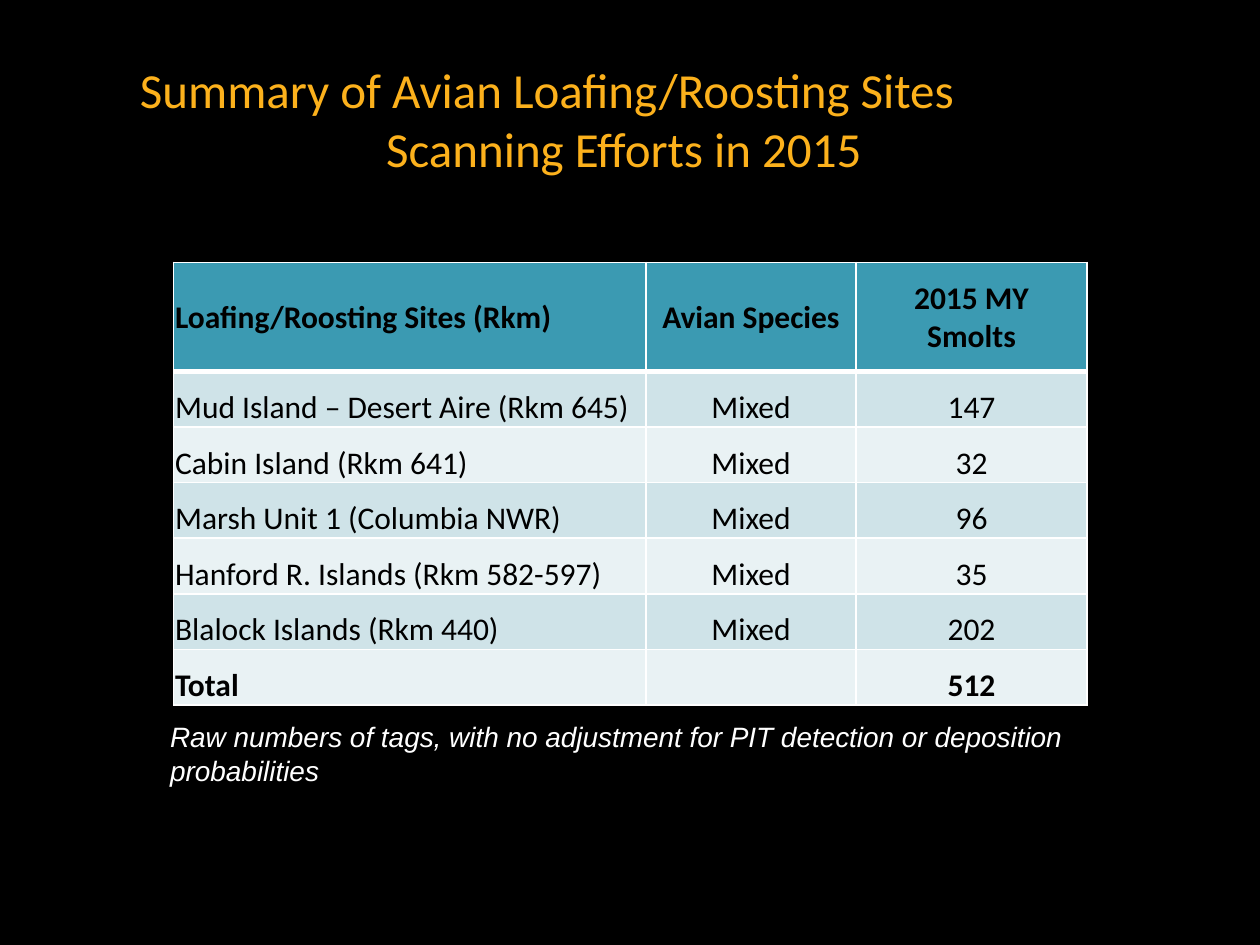
from dataclasses import dataclass

from lxml import etree
from pptx import Presentation
from pptx.dml.color import RGBColor
from pptx.enum.text import MSO_ANCHOR, PP_ALIGN
from pptx.oxml.ns import qn
from pptx.util import Cm, Pt

LEFT, CENTER = PP_ALIGN.LEFT, PP_ALIGN.CENTER
MIDDLE, BOTTOM = MSO_ANCHOR.MIDDLE, MSO_ANCHOR.BOTTOM


@dataclass(frozen=True)
class Theme:
    background: str = "000000"
    title: str = "FCB11C"
    note: str = "FFFFFF"
    border: str = "FFFFFF"
    cell_text: str = "000000"
    header: str = "3B9AB2"
    bands: tuple[str, str] = ("CFE3E8", "E9F2F4")
    font: str = "Calibri"
    note_font: str = "Arial"
    title_size: int = 28
    table_size: int = 18
    note_size: int = 16
    border_width: int = 1
    header_rule: int = 3


@dataclass(frozen=True)
class Site:
    name: str
    species: str
    smolts: str
    bold: bool = False


THEME = Theme()
HEADER = Site("Loafing/Roosting Sites (Rkm)", "Avian Species", "2015 MY\nSmolts", True)
SITES = (
    Site("Mud Island – Desert Aire (Rkm 645)", "Mixed", "147"),
    Site("Cabin Island (Rkm 641)", "Mixed", "32"),
    Site("Marsh Unit 1 (Columbia NWR)", "Mixed", "96"),
    Site("Hanford R. Islands (Rkm 582-597)", "Mixed", "35"),
    Site("Blalock Islands (Rkm 440)", "Mixed", "202"),
    Site("Total", "", "512", True),
)
COLUMN_WIDTHS = (9.52, 4.24, 4.65)
HEADER_HEIGHT, ROW_HEIGHT = 2.2, 1.12


def style_font(font, name: str, size: int, color: str) -> None:
    font.name = name
    font.size = Pt(size)
    font.color.rgb = RGBColor.from_string(color)


def add_text_box(slide, left: float, top: float, width: float, height: float, text: str):
    box = slide.shapes.add_textbox(Cm(left), Cm(top), Cm(width), Cm(height))
    box.text_frame.word_wrap = True
    para = box.text_frame.paragraphs[0]
    para.text = text
    return box.text_frame, para


def add_title(slide) -> None:
    """Centre both lines, with the first shifted left by a hanging indent."""
    frame, para = add_text_box(slide, 0.85, 1.07, 23.7, 1.98,
                               "Summary of Avian Loafing/Roosting Sites\vScanning Efforts in 2015")
    frame.margin_right = Cm(3.6)
    para.alignment = CENTER
    properties = para._p.get_or_add_pPr()
    properties.set("marL", str(Cm(3.1)))
    properties.set("indent", str(-Cm(3.1)))
    style_font(para.font, THEME.font, THEME.title_size, THEME.title)


def set_borders(cell, bottom_width: int, top_width: int) -> None:
    properties = cell._tc.get_or_add_tcPr()
    side = THEME.border_width
    widths = {"a:lnL": side, "a:lnR": side, "a:lnT": top_width, "a:lnB": bottom_width}
    for tag, width in widths.items():
        line = etree.SubElement(properties, qn(tag), w=str(Pt(width)))
        fill = etree.SubElement(line, qn("a:solidFill"))
        etree.SubElement(fill, qn("a:srgbClr"), val=THEME.border)


def fill_row(table, row: int, site: Site) -> None:
    is_header = row == 0
    color = THEME.header if is_header else THEME.bands[(row - 1) % 2]
    for column, text in enumerate((site.name, site.species, site.smolts)):
        cell = table.cell(row, column)
        cell.margin_left = cell.margin_right = cell.margin_top = Cm(0.03)
        cell.margin_bottom = 0
        cell.vertical_anchor = MIDDLE if is_header else BOTTOM
        cell.text = text
        for para in cell.text_frame.paragraphs:
            para.alignment = LEFT if column == 0 else CENTER
            style_font(para.font, THEME.font, THEME.table_size, THEME.cell_text)
            para.font.bold = site.bold
        set_borders(cell,
                    bottom_width=THEME.header_rule if is_header else THEME.border_width,
                    top_width=THEME.header_rule if row == 1 else THEME.border_width)
        cell.fill.solid()
        cell.fill.fore_color.rgb = RGBColor.from_string(color)


def add_site_table(slide) -> None:
    rows = (HEADER, *SITES)
    height = HEADER_HEIGHT + ROW_HEIGHT * len(SITES)
    table = slide.shapes.add_table(len(rows), len(COLUMN_WIDTHS), Cm(3.5), Cm(5.29),
                                   Cm(sum(COLUMN_WIDTHS)), Cm(height)).table
    for column, width in zip(table.columns, COLUMN_WIDTHS):
        column.width = Cm(width)
    for index, site in enumerate(rows):
        table.rows[index].height = Cm(ROW_HEIGHT if index else HEADER_HEIGHT)
        fill_row(table, index, site)


def add_note(slide) -> None:
    _, para = add_text_box(slide, 3.18, 14.39, 18.73, 1.62,
                           "Raw numbers of tags, with no adjustment for PIT detection "
                           "or deposition probabilities")
    style_font(para.font, THEME.note_font, THEME.note_size, THEME.note)
    para.font.italic = True


def main() -> None:
    deck = Presentation()
    deck.slide_width, deck.slide_height = Cm(25.4), Cm(19.05)
    slide = deck.slides.add_slide(deck.slide_layouts[6])
    slide.background.fill.solid()
    slide.background.fill.fore_color.rgb = RGBColor.from_string(THEME.background)
    add_title(slide)
    add_site_table(slide)
    add_note(slide)
    deck.save("out.pptx")


if __name__ == "__main__":
    main()
